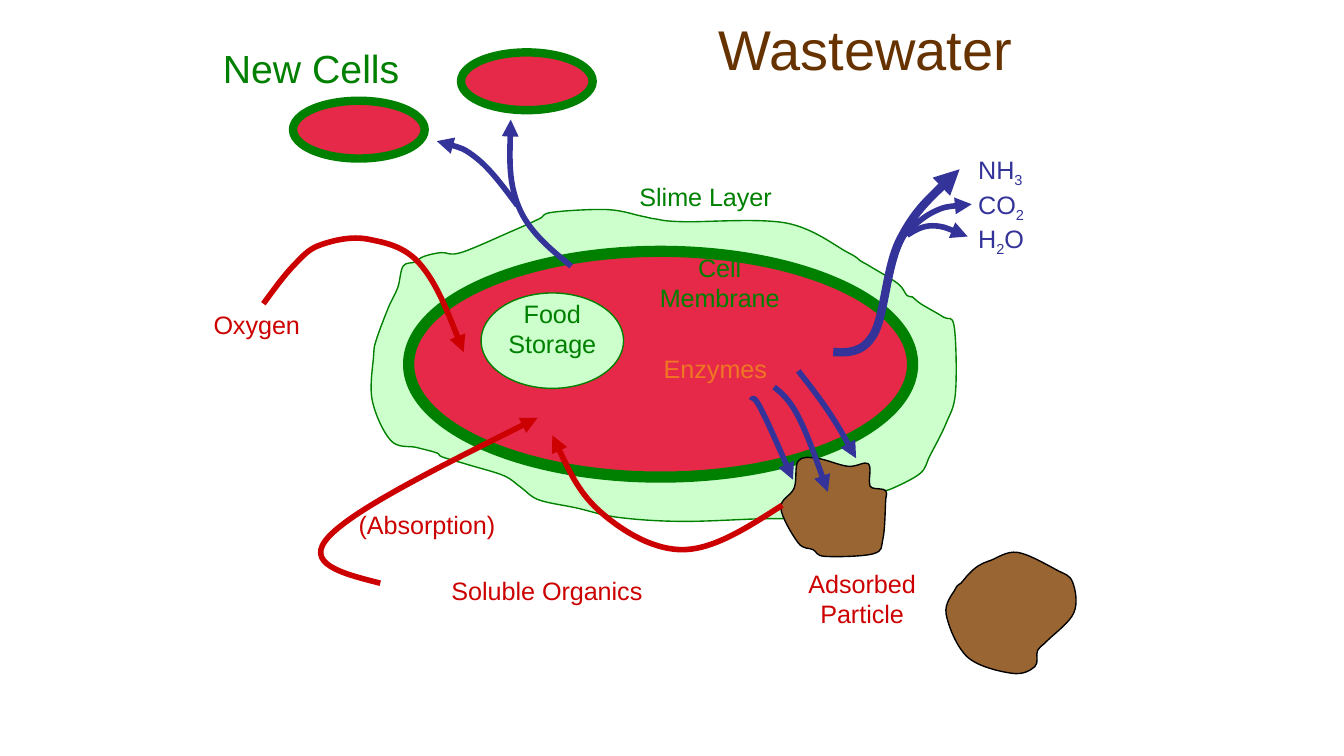
from dataclasses import dataclass
from itertools import groupby

from lxml import etree
from pptx import Presentation
from pptx.dml.color import RGBColor
from pptx.enum.shapes import MSO_SHAPE
from pptx.enum.text import MSO_AUTO_SIZE, PP_ALIGN
from pptx.oxml.ns import qn
from pptx.util import Inches, Pt

OVAL = MSO_SHAPE.OVAL
LEFT, CENTER = PP_ALIGN.LEFT, PP_ALIGN.CENTER
FIT_TEXT = MSO_AUTO_SIZE.SHAPE_TO_FIT_TEXT

GREEN = RGBColor(0x00, 0x80, 0x00)
PALE_GREEN = RGBColor(0xCC, 0xFF, 0xCC)
CELL_RED = RGBColor(0xE6, 0x29, 0x49)
RED = RGBColor(0xCC, 0x00, 0x00)
BLUE = RGBColor(0x33, 0x33, 0x99)
ORANGE = RGBColor(0xF0, 0x76, 0x24)
BROWN = RGBColor(0x99, 0x66, 0x33)
DARK_BROWN = RGBColor(0x66, 0x33, 0x00)
BLACK = RGBColor(0x00, 0x00, 0x00)

# A 16:9 slide, divided into 1000 columns and rows of the same size.
SLIDE_WIDTH = Inches(10)
SLIDE_HEIGHT = SLIDE_WIDTH * 9 // 16
GRID = SLIDE_WIDTH // 1000

SLIME_EDGE = [
    (128, 88), (115, 91), (109, 95), (100, 98), (96, 114), (89, 129),
    (80, 153), (78, 165), (77, 198), (91, 228), (110, 233), (125, 237),
    (129, 240), (149, 246), (175, 254), (188, 263), (201, 272), (229, 278),
    (260, 285), (307, 288), (368, 286), (401, 286), (413, 283), (423, 279),
    (431, 273), (452, 267), (465, 263), (485, 252), (492, 239), (504, 215),
    (511, 192), (510, 143), (502, 136), (485, 126), (479, 121), (475, 120),
    (468, 111), (447, 98), (440, 94), (431, 88), (385, 66), (308, 65),
    (288, 63), (278, 61), (252, 56), (211, 58), (201, 63), (181, 72), (143, 88),
]
ADSORBED_EDGE = [
    (94, 143), (91, 163), (81, 178), (94, 204), (105, 209), (114, 214),
    (150, 212), (157, 201), (159, 173), (159, 165), (149, 163), (147, 159),
    (146, 145), (131, 147), (108, 141),
]
FREE_EDGE = [
    (211, 238), (204, 257), (220, 289), (253, 301), (270, 296), (272, 284),
    (279, 277), (299, 256), (298, 233), (286, 224), (257, 211), (237, 217),
    (228, 221), (221, 227), (215, 234),
]


@dataclass
class Box:
    """A region of the slide, whose parts are placed from its top left corner."""
    slide: object
    left: int
    top: int

    def place(self, column, row):
        return (self.left + column) * GRID, (self.top + row) * GRID


def curve_vertices(points, closed):
    """Return two handles and an end point for each segment of a smooth curve."""
    knots = [complex(*point) for point in points]
    count = len(knots)
    handles = [(knots[(i + 1) % count] - knots[i - 1]) / 6 for i in range(count)]
    segments = count if closed else count - 1
    vertices = []
    for i in range(segments):
        j = (i + 1) % count
        leaving, arriving = knots[i] + handles[i], knots[j] - handles[j]
        if not closed and i == 0:
            leaving = (knots[i] + arriving) / 2
        elif not closed and i == segments - 1:
            arriving = (leaving + knots[j]) / 2
        vertices += [leaving, arriving, knots[j]]
    return [(vertex.real, vertex.imag) for vertex in vertices]


def add_curve(box, points, closed=False):
    builder = box.slide.shapes.build_freeform(*box.place(*points[0]))
    vertices = [box.place(*vertex) for vertex in curve_vertices(points, closed)]
    builder.add_line_segments(vertices, close=closed)
    shape = builder.convert_to_shape()
    shape.shadow.inherit = False
    lines = list(shape._element.iter(qn("a:lnTo")))
    for i in range(0, len(lines), 3):
        cubic = etree.Element(qn("a:cubicBezTo"))
        lines[i].addprevious(cubic)
        for line in lines[i:i + 3]:
            cubic.append(line[0])
            line.getparent().remove(line)
    return shape


def paint(shape, fill, line, width):
    shape.fill.solid()
    shape.fill.fore_color.rgb = fill
    shape.line.color.rgb = line
    shape.line.width = Pt(width)


def add_blob(box, points, fill, line):
    paint(add_curve(box, points, closed=True), fill, line, 0.75)


def add_arrow(box, points, color, width=3):
    shape = add_curve(box, points)
    shape.fill.background()
    shape.line.color.rgb = color
    shape.line.width = Pt(width)
    etree.SubElement(shape.get_or_add_ln(), qn("a:tailEnd"), type="triangle")


def add_oval(box, column, row, width, height, fill, line_width):
    shape = box.slide.shapes.add_shape(
        OVAL, *box.place(column, row), width * GRID, height * GRID)
    shape.shadow.inherit = False
    paint(shape, fill, GREEN, line_width)


def add_label(box, column, row, width, height, lines, color, size=13.5, align=LEFT):
    """Add a text box in which digits are set as subscripts."""
    shape = box.slide.shapes.add_textbox(
        *box.place(column, row), width * GRID, height * GRID)
    frame = shape.text_frame
    frame.word_wrap = False
    frame.auto_size = FIT_TEXT
    for i, line in enumerate(lines):
        paragraph = frame.add_paragraph() if i else frame.paragraphs[0]
        paragraph.alignment = align
        paragraph.font.name = "Arial"
        paragraph.font.size = Pt(size)
        paragraph.font.color.rgb = color
        for is_digit, letters in groupby(line, str.isdigit):
            run = paragraph.add_run()
            run.text = "".join(letters)
            if is_digit:
                run._r.get_or_add_rPr().set("baseline", "-25000")


def draw_cell(box):
    add_blob(box, SLIME_EDGE, PALE_GREEN, GREEN)
    add_oval(box, 104, 87, 375, 168, CELL_RED, 6)
    add_oval(box, 158, 118, 106, 71, PALE_GREEN, 0.75)
    add_label(box, 168, 117, 86, 56, ["Food", "Storage"], GREEN, align=CENTER)
    add_label(box, 266, 30, 120, 33, ["Slime Layer"], GREEN)
    add_label(box, 280, 83, 111, 56, ["Cell", "Membrane"], GREEN, align=CENTER)


def draw_new_cells(box):
    for column, row in [(118, 75), (243, 39)]:
        add_oval(box, column, row, 98, 43, CELL_RED, 4.5)
    add_arrow(box, [(325, 198), (286, 154), (280, 89)], BLUE)
    add_arrow(box, [(285, 153), (255, 118), (225, 105)], BLUE)
    add_label(box, 56, 28, 152, 45, ["New Cells"], GREEN, size=21)


def draw_gases(box):
    add_arrow(box, [(20, 162), (50, 149), (70, 78), (114, 26)], BLUE, 4.5)
    add_arrow(box, [(69, 79), (94, 58), (123, 52)], BLUE)
    add_arrow(box, [(75, 75), (94, 68), (120, 76)], BLUE)
    add_label(box, 118, 10, 109, 78, ["NH3", "CO2", "H2O"], BLUE)


def draw_particles(box):
    add_blob(box, FREE_EDGE, BROWN, BLACK)
    add_blob(box, ADSORBED_EDGE, BROWN, BLACK)
    add_label(box, 91, 218, 101, 56, ["Adsorbed", "Particle"], RED, align=CENTER)


def draw_enzymes(box):
    add_arrow(box, [(59, 98), (66, 104), (90, 157)], BLUE)
    add_arrow(box, [(94, 76), (117, 107), (137, 141)], BLUE)
    add_arrow(box, [(76, 88), (94, 110), (116, 166)], BLUE)
    add_label(box, -16, 58, 98, 33, ["Enzymes"], ORANGE)


def draw_uptake(box):
    add_label(box, 49, 125, 85, 33, ["Oxygen"], RED)
    add_arrow(box, [(96, 126), (119, 97), (139, 82), (174, 78),
                    (213, 97), (245, 162)], RED)
    add_label(box, 225, 323, 164, 56, ["Soluble Organics"], RED, align=CENTER)
    add_arrow(box, [(183, 334), (145, 299), (300, 211)], RED)
    add_arrow(box, [(482, 276), (410, 309), (348, 282), (311, 224)], RED)
    add_label(box, 157, 274, 123, 33, ["(Absorption)"], RED)


def draw_title(box):
    add_label(box, 25, 6, 241, 61, ["Wastewater"], DARK_BROWN, size=30)


def main():
    presentation = Presentation()
    presentation.slide_width = SLIDE_WIDTH
    presentation.slide_height = SLIDE_HEIGHT
    slide = presentation.slides.add_slide(presentation.slide_layouts[6])
    draw_cell(Box(slide, 200, 100))
    draw_new_cells(Box(slide, 100, 0))
    draw_gases(Box(slide, 600, 100))
    draw_particles(Box(slide, 500, 200))
    draw_uptake(Box(slide, 100, 100))
    draw_enzymes(Box(slide, 500, 200))
    draw_title(Box(slide, 500, 0))
    presentation.save("out.pptx")


if __name__ == "__main__":
    main()
